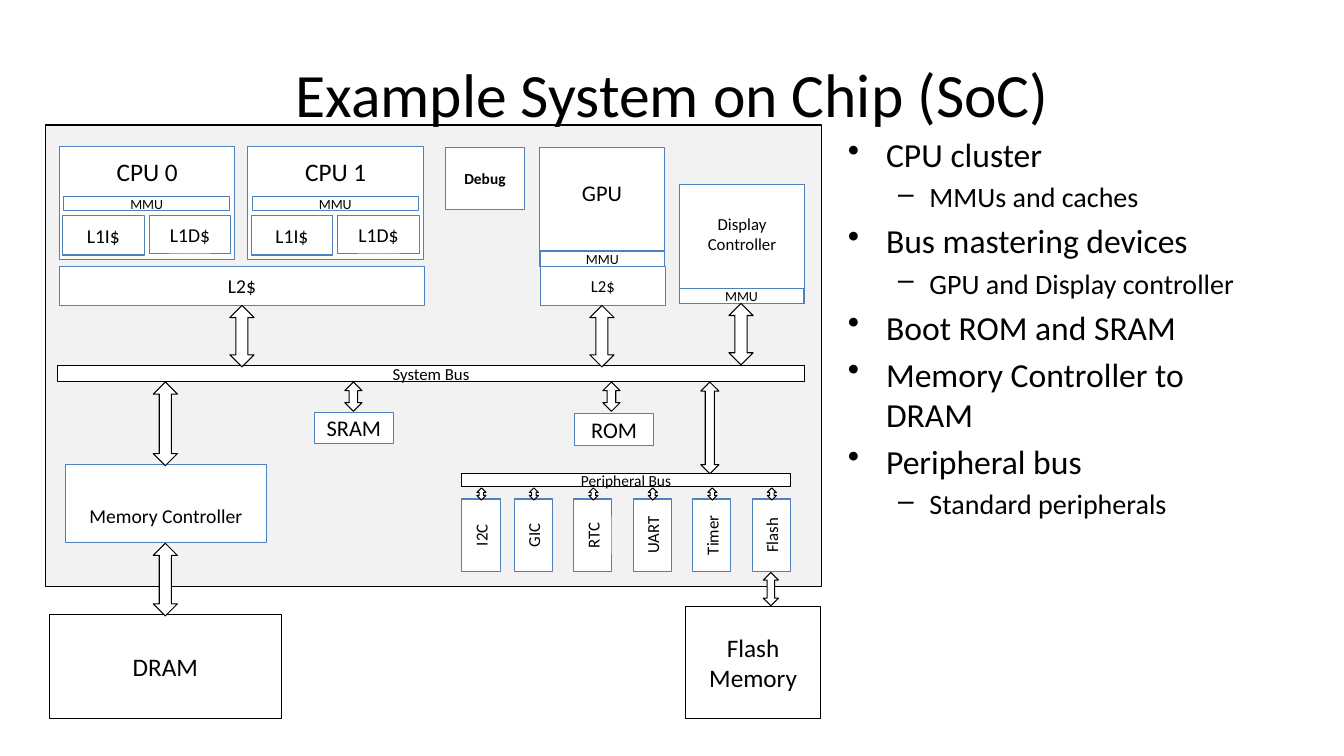
from lxml.etree import SubElement
from pptx import Presentation
from pptx.dml.color import RGBColor
from pptx.enum.shapes import MSO_SHAPE
from pptx.enum.text import MSO_ANCHOR, PP_ALIGN
from pptx.oxml.ns import qn
from pptx.util import Emu, Pt

PX = 9144
FONT = "Calibri"
BLACK, WHITE, BLUE, GREY = "000000", "FFFFFF", "4F81BD", "F2F2F2"

TITLE = "Example System on Chip (SoC)"
BULLETS = [
    (0, "CPU cluster"),
    (1, "MMUs and caches"),
    (0, "Bus mastering devices"),
    (1, "GPU and Display controller"),
    (0, "Boot ROM and SRAM"),
    (0, "Memory Controller to DRAM"),
    (0, "Peripheral bus"),
    (1, "Standard peripherals"),
]
# level: size, left margin, hanging indent, bullet
BULLET_LEVELS = [(24, 38, 38, "•"), (20, 81, 31, "–")]

CHIP = (45, 124, 770, 458)
CPUS = [("CPU 0", 59), ("CPU 1", 246)]
CPU_TOP = 145
CPU_PARTS = [
    ("L1I$", 3, 69, 81, 39, 14),
    ("L1D$", 89, 69, 81, 38, 14),
    ("MMU", 4, 50, 165, 14, 10),
]
# text, left, top, width, height, size, fill, line
BLOCKS = [
    ("L2$", 59, 264, 362, 39, 14, WHITE, BLUE),
    ("System Bus", 57, 363, 741, 16, 12, WHITE, BLACK),
    ("Peripheral Bus", 458, 470, 326, 13, 11, WHITE, BLACK),
    ("DRAM", 49, 610, 230, 103, 18, None, BLACK),
    ("Flash\nMemory", 680, 602, 134, 111, 18, None, BLACK),
    ("L2$", 536, 264, 124, 39, 12, WHITE, BLUE),
    ("SRAM", 312, 409, 78, 31, 16, WHITE, BLUE),
    ("ROM", 570, 410, 78, 32, 16, WHITE, BLUE),
]
# text, left, top, width, height, size, top inset, bottom inset
OFFSET_BLOCKS = [
    ("GPU", 535, 146, 124, 118, 16, 5, 32),
    ("Display\nController", 674, 183, 124, 118, 12, 5, 25),
    ("Memory Controller", 65, 461, 199, 77, 14, 29, 5),
]
DEVICE_MMUS = [(536, 249, None), (674, 286, WHITE)]
DEBUG = ("Debug", 442, 146, 78, 62, 11)
# centre, top, width, height
ARROWS = [
    (240, 303, 24, 61), (597, 303, 24, 61), (735, 301, 24, 61),
    (164, 379, 24, 83), (164, 539, 24, 72), (704, 379, 18, 91),
    (350, 379, 17, 29), (606, 379, 17, 29), (764, 568, 15, 33),
]
PERIPHERALS = ["GIC", "RTC", "UART", "Timer", "Flash"]
FIRST_CENTRE, PITCH = 529, 59
PERIPHERAL_CENTRES = [("I2C", 477)] + [
    (name, FIRST_CENTRE + PITCH * i) for i, name in enumerate(PERIPHERALS)]


def px(value):
    return Emu(value * PX)


def color(value):
    return RGBColor.from_string(value)


def style_text(frame, text, size, align=PP_ALIGN.CENTER, bold=False):
    frame.word_wrap = True
    frame.text = text
    for para in frame.paragraphs:
        para.alignment = align
        for span in para.runs:
            span.font.name = FONT
            span.font.size = Pt(size)
            span.font.bold = bold
            span.font.color.rgb = color(BLACK)


def add_block(kind, left, top, width, height, fill=WHITE, line=BLUE):
    block = page.shapes.add_shape(kind, px(left), px(top), px(width), px(height))
    block.shadow.inherit = False
    if fill:
        block.fill.solid()
        block.fill.fore_color.rgb = color(fill)
    else:
        block.fill.background()
    block.line.color.rgb = color(line)
    block.line.width = Pt(0.75)
    return block


def add_label(text, left, top, width, height, size, fill=WHITE, line=BLUE,
              inset_top=5, inset_bottom=5, bold=False):
    block = add_block(MSO_SHAPE.RECTANGLE, left, top, width, height, fill, line)
    frame = block.text_frame
    frame.vertical_anchor = MSO_ANCHOR.MIDDLE
    frame.margin_top, frame.margin_bottom = px(inset_top), px(inset_bottom)
    style_text(frame, text, size, bold=bold)
    return block


def add_arrow(centre, top, width, height):
    left = centre - width // 2
    add_block(MSO_SHAPE.UP_DOWN_ARROW, left, top, width, height, line=BLACK)


def add_text(left, top, width, height):
    return page.shapes.add_textbox(px(left), px(top), px(width), px(height)).text_frame


deck = Presentation()
deck.slide_width, deck.slide_height = px(1333), px(750)
page = deck.slides.add_slide(deck.slide_layouts[6])

chip = add_block(MSO_SHAPE.ROUNDED_RECTANGLE, *CHIP, fill=GREY, line=BLACK)
chip.adjustments[0] = 0

title = add_text(67, 30, 1200, 125)
title.vertical_anchor = MSO_ANCHOR.MIDDLE
style_text(title, TITLE, 44)

for name, cpu_left in CPUS:
    add_label(name, cpu_left, CPU_TOP, 174, 112, 18, inset_bottom=66)
    for text, dx, dy, width, height, size in CPU_PARTS:
        add_label(text, cpu_left + dx, CPU_TOP + dy, width, height, size)

for block in BLOCKS:
    add_label(*block)
for *block, inset_top, inset_bottom in OFFSET_BLOCKS:
    add_label(*block, inset_top=inset_top, inset_bottom=inset_bottom)
for left, top, fill in DEVICE_MMUS:
    add_label("MMU", left, top, 123, 15, 10, fill)
add_label(*DEBUG, bold=True)

for arrow in ARROWS:
    add_arrow(*arrow)
for name, centre in PERIPHERAL_CENTRES:
    add_label(name, centre - 36, 512, 72, 38, 12).rotation = 270
    add_arrow(centre, 484, 9, 12)

body = add_text(831, 128, 442, 541)
style_text(body, "\n".join(text for _, text in BULLETS), 24, PP_ALIGN.LEFT)
for para, (level, _) in zip(body.paragraphs, BULLETS):
    size, margin, hanging, mark = BULLET_LEVELS[level]
    para.level = level
    para.space_before = Pt(size * 0.2)
    para.runs[0].font.size = Pt(size)
    properties = para._p.get_or_add_pPr()
    properties.set("marL", str(px(margin)))
    properties.set("indent", str(px(-hanging)))
    SubElement(properties, qn("a:buChar")).set("char", mark)

deck.save("out.pptx")
